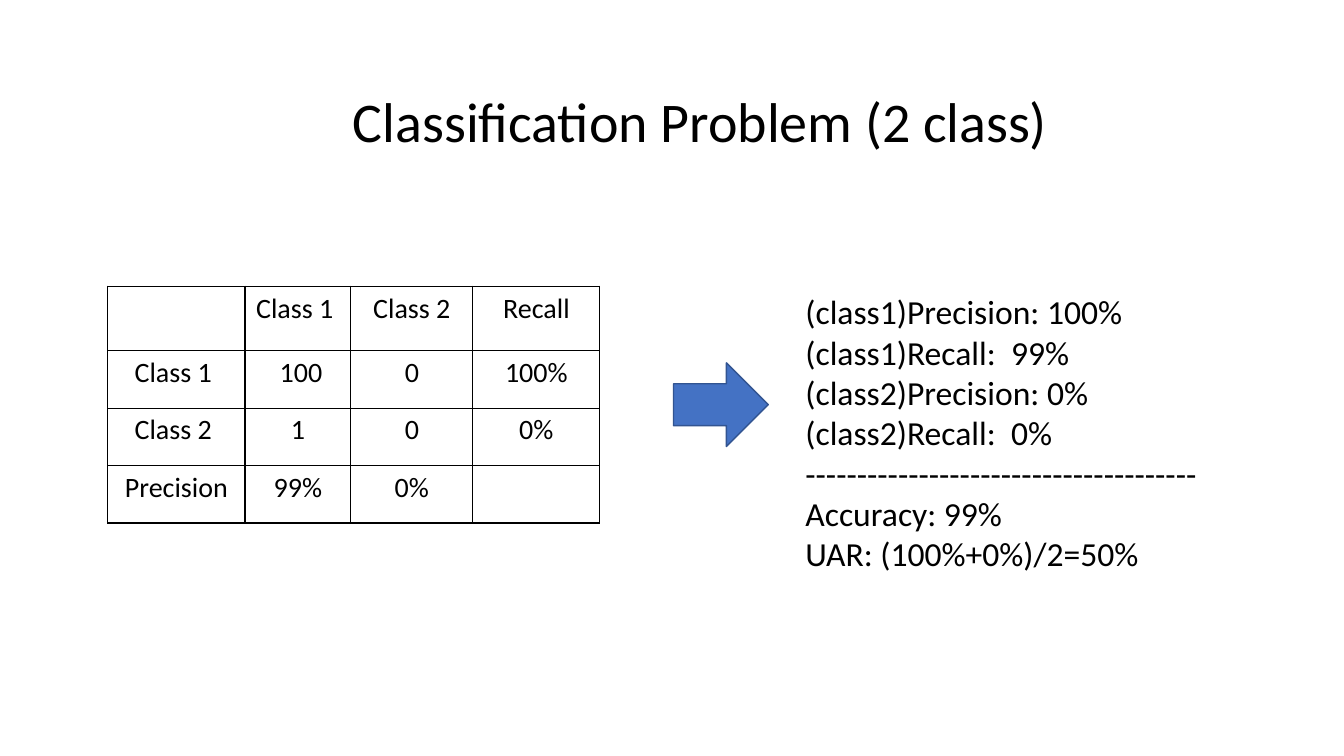
"""Build a slide on the scores of a two-class classification problem."""
from lxml.etree import SubElement
from pptx import Presentation
from pptx.dml.color import RGBColor
from pptx.enum.shapes import MSO_SHAPE as Shape
from pptx.enum.text import MSO_ANCHOR as Anchor, PP_ALIGN as Align
from pptx.oxml.ns import qn
from pptx.util import Inches, Pt

BLACK = RGBColor(0x00, 0x00, 0x00)
WHITE = RGBColor(0xFF, 0xFF, 0xFF)
BLUE = RGBColor(0x44, 0x72, 0xC4)
DARK_BLUE = RGBColor(0x32, 0x54, 0x91)

TITLE = "Classification Problem (2 class)"
CONFUSION = [
    ["", "Class 1 ", " Class 2 ", "Recall"],
    ["Class 1 ", " 100", "0", "100%"],
    ["Class 2 ", "1", "0", "0%"],
    ["Precision", "99%", "0%", ""],
]
SCORES = [
    "(class1)Precision: 100%",
    "(class1)Recall:  99%",
    "(class2)Precision: 0%",
    "(class2)Recall:  0%",
    "-" * 38,
    "Accuracy: 99%",
    "UAR: (100%+0%)/2=50%",
]
COLUMN_WIDTHS = [1.36, 1.05, 1.21, 1.26]
ROW_HEIGHTS = [0.64] + [0.57] * 3
BODY_TOP = 2.84
PLACES = {
    "title": (3.4, 0.81, 7.16, 0.77),
    "table": (1.07, BODY_TOP, sum(COLUMN_WIDTHS), sum(ROW_HEIGHTS)),
    "arrow": (6.68, 3.6, 0.94, 0.83),
    "scores": (7.89, BODY_TOP, 4.13, 2.93),
}


def place(name):
    return [Inches(length) for length in PLACES[name]]


def write(frame, lines, size, align=Align.LEFT):
    for index, line in enumerate(lines):
        para = frame.paragraphs[0] if index == 0 else frame.add_paragraph()
        para.text = line
        para.alignment = align
        for name, value in {"size": Pt(size), "name": "Calibri"}.items():
            setattr(para.font, name, value)
        para.font.color.rgb = BLACK


def add_borders(cell):
    properties = cell._tc.get_or_add_tcPr()
    for side in ("a:lnL", "a:lnR", "a:lnT", "a:lnB"):
        line = SubElement(properties, qn(side), w=str(Pt(1)))
        fill = SubElement(line, qn("a:solidFill"))
        SubElement(fill, qn("a:srgbClr"), val=str(BLACK))


def add_confusion_table(slide):
    table = slide.shapes.add_table(
        len(CONFUSION), len(COLUMN_WIDTHS), *place("table")).table
    table.first_row = table.horz_banding = False
    for column, width in zip(table.columns, COLUMN_WIDTHS):
        column.width = Inches(width)
    for row, height, texts in zip(table.rows, ROW_HEIGHTS, CONFUSION):
        row.height = Inches(height)
        for cell, text in zip(row.cells, texts):
            add_borders(cell)
            cell.fill.solid()
            cell.fill.fore_color.rgb = WHITE
            write(cell.text_frame, [text], 20, Align.CENTER)


def add_arrow(slide):
    arrow = slide.shapes.add_shape(Shape.RIGHT_ARROW, *place("arrow"))
    arrow.shadow.inherit = False
    arrow.fill.solid()
    arrow.fill.fore_color.rgb = BLUE
    arrow.line.color.rgb = DARK_BLUE
    arrow.line.width = Pt(1)


def main():
    deck = Presentation()
    deck.slide_width, deck.slide_height = Inches(13.33), Inches(7.5)
    slide = deck.slides.add_slide(deck.slide_layouts[5])

    title = slide.shapes.title
    title.left, title.top, title.width, title.height = place("title")
    title.text_frame.vertical_anchor = Anchor.TOP
    write(title.text_frame, [TITLE], 40)

    add_confusion_table(slide)
    add_arrow(slide)

    scores = slide.shapes.add_textbox(*place("scores"))
    scores.text_frame.word_wrap = False
    write(scores.text_frame, SCORES, 24)

    deck.save("out.pptx")


if __name__ == "__main__":
    main()
